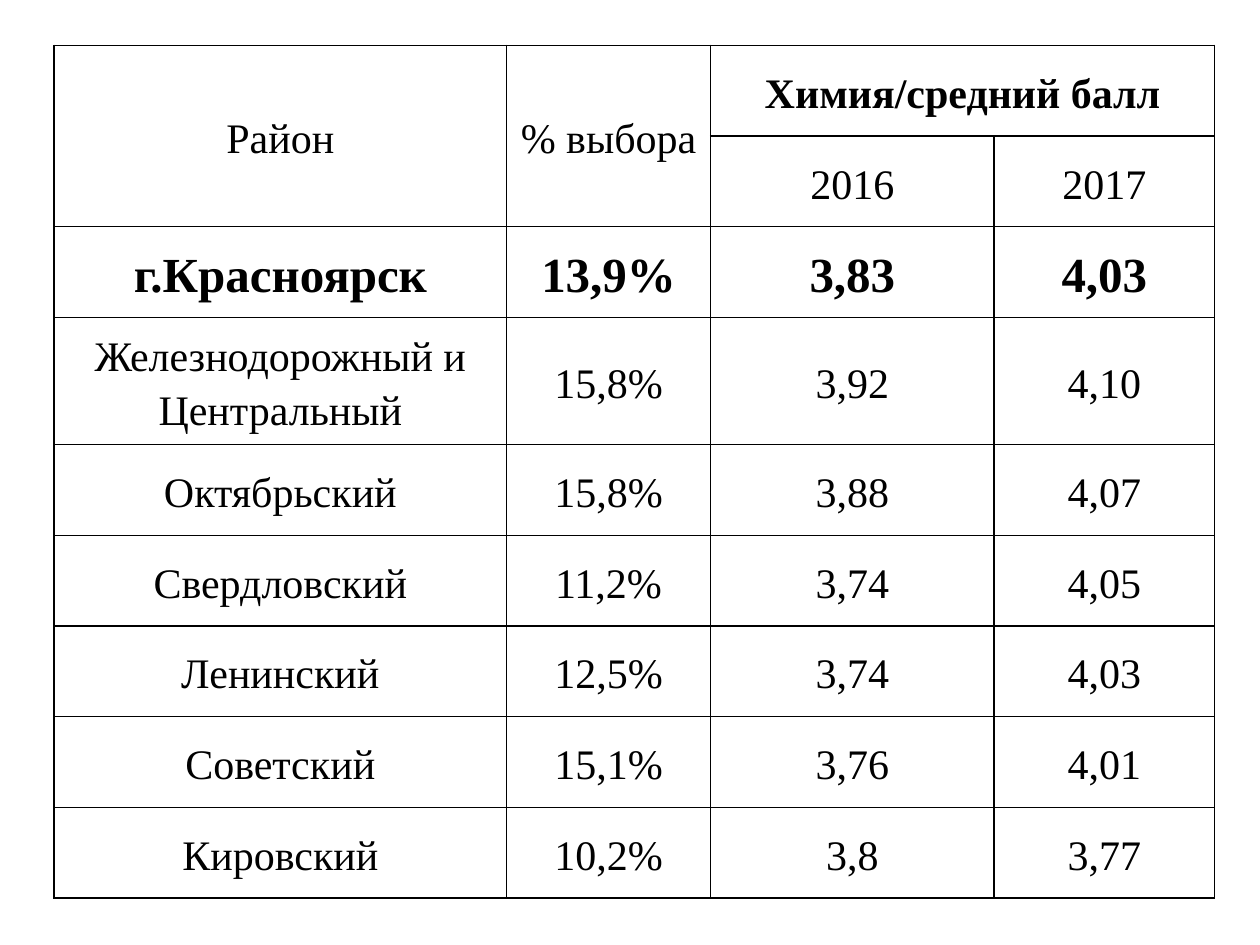
"""Builds a slide with a table of chemistry exam results by city district."""
from dataclasses import dataclass

from lxml.etree import SubElement
from pptx import Presentation
from pptx.dml.color import RGBColor
from pptx.enum.text import MSO_ANCHOR as Anchor, PP_ALIGN as Align
from pptx.oxml.ns import qn
from pptx.table import Table, _Cell as Cell
from pptx.util import Inches, Pt

SLIDE_WIDTH, SLIDE_HEIGHT = Inches(10), Inches(7.5)
UNIT = SLIDE_WIDTH / 100
LEFT, TOP = 4.3, 3.6
COLUMNS = [35.9, 16.2, 22.5, 17.5]
ROW, TALL_ROW = 7.2, 10.1
HEADER_ROWS = 2
FONT, INK = "Times New Roman", "000000"


@dataclass
class Heading:
    text: str
    row: int
    column: int
    row_span: int = 1
    column_span: int = 1
    bold: bool = False


@dataclass
class District:
    name: str
    share: str
    score_2016: str
    score_2017: str
    height: float = ROW
    size: int = 24
    bold: bool = False


HEADINGS = [
    Heading("Район", 0, 0, row_span=2),
    Heading("% выбора", 0, 1, row_span=2),
    Heading("Химия/средний балл", 0, 2, column_span=2, bold=True),
    Heading("2016", 1, 2),
    Heading("2017", 1, 3),
]
DISTRICTS = [
    District("г.Красноярск", "13,9%", "3,83", "4,03", size=28, bold=True),
    District("Железнодорожный и Центральный", "15,8%", "3,92", "4,10", height=TALL_ROW),
    District("Октябрьский", "15,8%", "3,88", "4,07"),
    District("Свердловский", "11,2%", "3,74", "4,05"),
    District("Ленинский", "12,5%", "3,74", "4,03"),
    District("Советский", "15,1%", "3,76", "4,01"),
    District("Кировский", "10,2%", "3,8", "3,77"),
]


def units(count: float) -> int:
    return round(count * UNIT)


def color(value: str) -> RGBColor:
    return RGBColor.from_string(value)


def write(cell: Cell, text: str, size: int = 24, bold: bool = False) -> None:
    para = cell.text_frame.paragraphs[0]
    para.alignment, para.line_spacing = Align.CENTER, 1.15
    span = para.add_run()
    span.text = text
    font = span.font
    font.name, font.size, font.bold = FONT, Pt(size), bold
    font.color.rgb = color(INK)


def style_cell(cell: Cell) -> None:
    cell.vertical_anchor = Anchor.MIDDLE
    cell.margin_left = cell.margin_right = Inches(0.07)
    cell.margin_top = cell.margin_bottom = 0
    properties = cell._tc.get_or_add_tcPr()
    for side in ("L", "R", "T", "B"):
        line = SubElement(properties, qn(f"a:ln{side}"), w=str(Pt(1)))
        fill = SubElement(line, qn("a:solidFill"))
        SubElement(fill, qn("a:srgbClr"), val=INK)
    cell.fill.background()


def fill_headings(table: Table) -> None:
    for item in HEADINGS:
        cell = table.cell(item.row, item.column)
        if item.row_span * item.column_span > 1:
            last_row = item.row + item.row_span - 1
            last_column = item.column + item.column_span - 1
            cell.merge(table.cell(last_row, last_column))
        write(cell, item.text, bold=item.bold)


def fill_districts(table: Table) -> None:
    for row, item in enumerate(DISTRICTS, HEADER_ROWS):
        values = (item.name, item.share, item.score_2016, item.score_2017)
        for column, text in enumerate(values):
            write(table.cell(row, column), text, size=item.size, bold=item.bold)


def main() -> None:
    deck = Presentation()
    deck.slide_width, deck.slide_height = SLIDE_WIDTH, SLIDE_HEIGHT
    page = deck.slides.add_slide(deck.slide_layouts[6])
    heights = [ROW] * HEADER_ROWS + [item.height for item in DISTRICTS]
    table = page.shapes.add_table(
        len(heights), len(COLUMNS), units(LEFT), units(TOP),
        units(sum(COLUMNS)), units(sum(heights))).table
    table.first_row = table.horz_banding = False
    for column, width in zip(table.columns, COLUMNS):
        column.width = units(width)
    for row, height in zip(table.rows, heights):
        row.height = units(height)
    for cell in table.iter_cells():
        style_cell(cell)
    fill_headings(table)
    fill_districts(table)
    deck.save("out.pptx")


if __name__ == "__main__":
    main()
